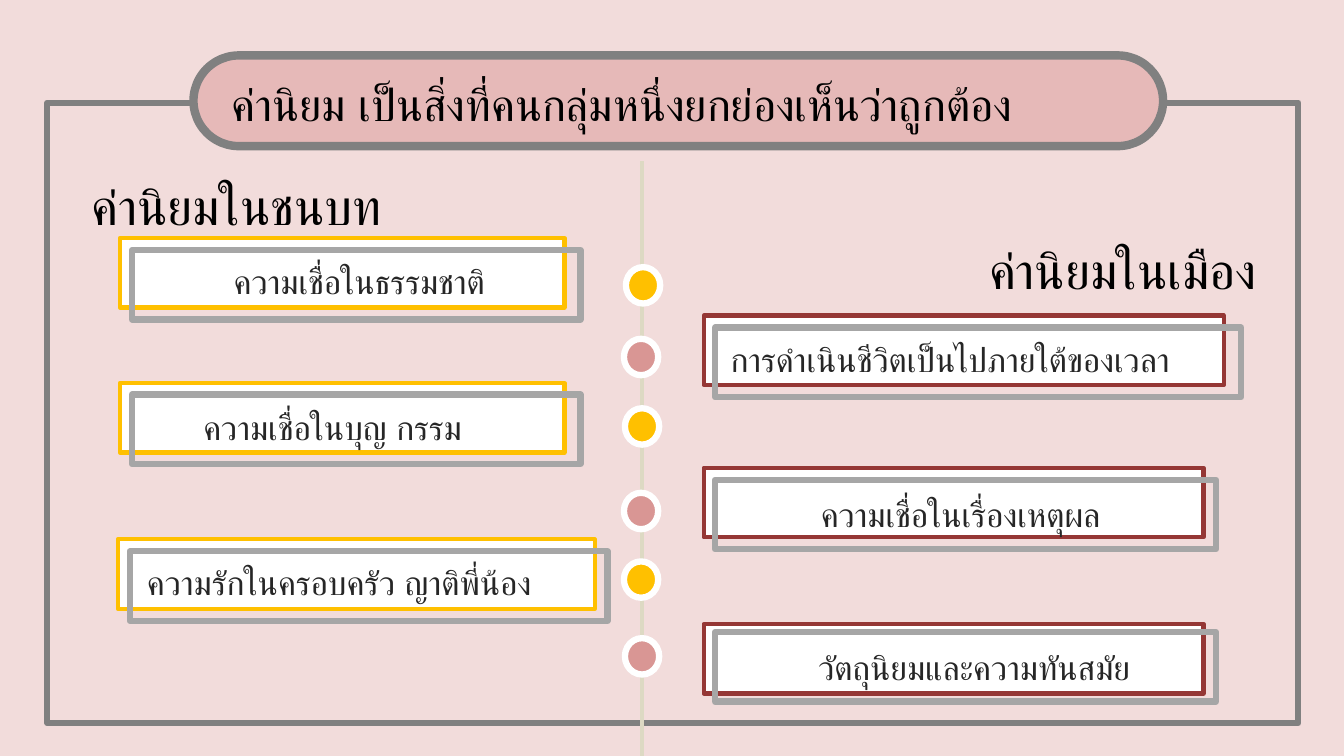
import lxml.etree
import pptx
import pptx.dml.color
import pptx.enum.shapes
import pptx.enum.text
import pptx.oxml.ns
import pptx.util

Pt = pptx.util.Pt
SHAPE = pptx.enum.shapes.MSO_SHAPE
ALIGN = pptx.enum.text.PP_ALIGN

COLORS = {
    "background": "F2DCDB", "frame": "808080", "banner": "E6B9B8",
    "axis": "DDD9C3", "white": "FFFFFF", "outline": "A6A6A6",
    "rural": "FFC000", "urban": "953735", "urban_dot": "D99694",
    "heading": "000000", "body": "262626",
}


class Board:
    """Holds the slide and its style, and draws each kind of element in points."""

    font = "Arial"

    def __init__(self, prs):
        self.slide = prs.slides.add_slide(prs.slide_layouts[6])
        fill = self.slide.background.fill
        fill.solid()
        fill.fore_color.rgb = self.color("background")

    def color(self, name):
        return pptx.dml.color.RGBColor.from_string(COLORS[name])

    def shape(self, kind, x, y, w, h, line, weight, fill=None, adj=None):
        sp = self.slide.shapes.add_shape(kind, Pt(x), Pt(y), Pt(w), Pt(h))
        sp.shadow.inherit = False
        if fill:
            sp.fill.solid()
            sp.fill.fore_color.rgb = self.color(fill)
        else:
            sp.fill.background()
        sp.line.color.rgb = self.color(line)
        sp.line.width = Pt(weight)
        if adj is not None:
            sp.adjustments[0] = adj
        return sp

    def line(self, x1, y1, x2, y2, color, weight):
        cxn = self.slide.shapes.add_connector(
            pptx.enum.shapes.MSO_CONNECTOR.STRAIGHT, Pt(x1), Pt(y1), Pt(x2), Pt(y2))
        cxn.line.color.rgb = self.color(color)
        cxn.line.width = Pt(weight)
        lxml.etree.SubElement(cxn._element.spPr, pptx.oxml.ns.qn("a:effectLst"))

    def text(self, x, y, w, h, text, size, color, align=ALIGN.LEFT, wrap=True, spacing=1.07):
        sp = self.slide.shapes.add_textbox(Pt(x), Pt(y), Pt(w), Pt(h))
        tf = sp.text_frame
        tf.word_wrap = wrap
        tf.auto_size = pptx.enum.text.MSO_AUTO_SIZE.SHAPE_TO_FIT_TEXT
        p = tf.paragraphs[0]
        p.alignment = align
        p.line_spacing = spacing
        r = p.add_run()
        r.text = text
        r.font.name = self.font
        r.font.size = Pt(size)
        r.font.color.rgb = self.color(color)
        cs = lxml.etree.SubElement(r.font._element, pptx.oxml.ns.qn("a:cs"))
        cs.set("typeface", self.font)

    def frame(self, left, top, right, bottom, inner_left, inner_right):
        for x, w, flip in ((left, inner_left - left, False),
                           (inner_right, right - inner_right, True)):
            sp = self.shape(SHAPE.LEFT_BRACKET, x, top, w, bottom - top, "frame", 4.5, adj=0)
            if flip:
                sp._element.spPr.xfrm.set("flipH", "1")
        self.line(inner_left, bottom, inner_right, bottom, "frame", 4.5)

    def dot(self, x, y, fill):
        self.shape(SHAPE.OVAL, x, y, 24.5, 26, "white", 4.5, fill)

    def card(self, color, x, y, w, outline, label):
        dx, dy, outline_w = outline
        self.shape(SHAPE.RECTANGLE, x, y, w, 49.7, color, 3, "white")
        self.shape(SHAPE.RECTANGLE, x + dx, y + dy, outline_w, 49.7, "outline", 4.5)
        text_x, text_y, text_w, text, align = label
        self.text(text_x, text_y, text_w, 38.2, text, 24, "body", align)


CARDS = [
    ("rural", 85.7, 170, 317.5, (8.6, 8.6, 320.4),
     (97.9, 180.7, 317.5, "ความเชื่อในธรรมชาติ", ALIGN.CENTER)),
    ("rural", 85.7, 273.6, 317.5, (8.6, 8.2, 320.4),
     (138.2, 285.1, 245.5, "ความเชื่อในบุญ กรรม", ALIGN.LEFT)),
    ("rural", 84.2, 385.2, 340.6, (8.6, 8.6, 341.3),
     (97.9, 396, 349.2, "ความรักในครอบครัว ญาติพี่น้อง", ALIGN.LEFT)),
    ("urban", 502.6, 225.4, 371.5, (8.2, 8.6, 375.8),
     (514.8, 236.2, 377.3, "การดำเนินชีวิตเป็นไปภายใต้ของเวลา", ALIGN.LEFT)),
    ("urban", 502.6, 334.1, 357.1, (8.2, 8.6, 357.8),
     (512.6, 347, 347, "ความเชื่อในเรื่องเหตุผล", ALIGN.CENTER)),
    ("urban", 502.6, 445.7, 357.1, (8.2, 5.8, 357.8),
     (517.7, 456.5, 356.4, "วัตถุนิยมและความทันสมัย", ALIGN.CENTER)),
]
DOTS = [(447.1, 190.8), (445.7, 242), (446.4, 291.6),
        (445.7, 352), (445.7, 401), (446.4, 455.8)]
HEADINGS = [(37.4, 118.8, "ค่านิยมในชนบท"), (670.3, 164.2, "ค่านิยมในเมือง")]


def main():
    """Build the slide and save it."""
    prs = pptx.Presentation()
    prs.slide_width, prs.slide_height = Pt(960), Pt(540)
    s = Board(prs)
    s.frame(33.8, 73.4, 927.4, 516.5, 203.8, 748.1)
    s.shape(SHAPE.ROUNDED_RECTANGLE, 138.2, 39.6, 692.6, 64.8, "frame", 6, "banner", 0.5)
    s.text(158.4, 51.1, 653, 46.1, "ค่านิยม เป็นสิ่งที่คนกลุ่มหนึ่งยกย่องเห็นว่าถูกต้อง",
           32, "heading", wrap=False, spacing=1.0)
    s.line(458.6, 115.2, 458.6, 556.6, "axis", 3)
    for i, (x, y) in enumerate(DOTS):
        s.dot(x, y, ("rural", "urban_dot")[i % 2])
    for card in CARDS:
        s.card(*card)
    for x, y, text in HEADINGS:
        s.text(x, y, 263.5, 54, text, 36, "heading", ALIGN.CENTER)
    prs.save("out.pptx")


if __name__ == "__main__":
    main()
